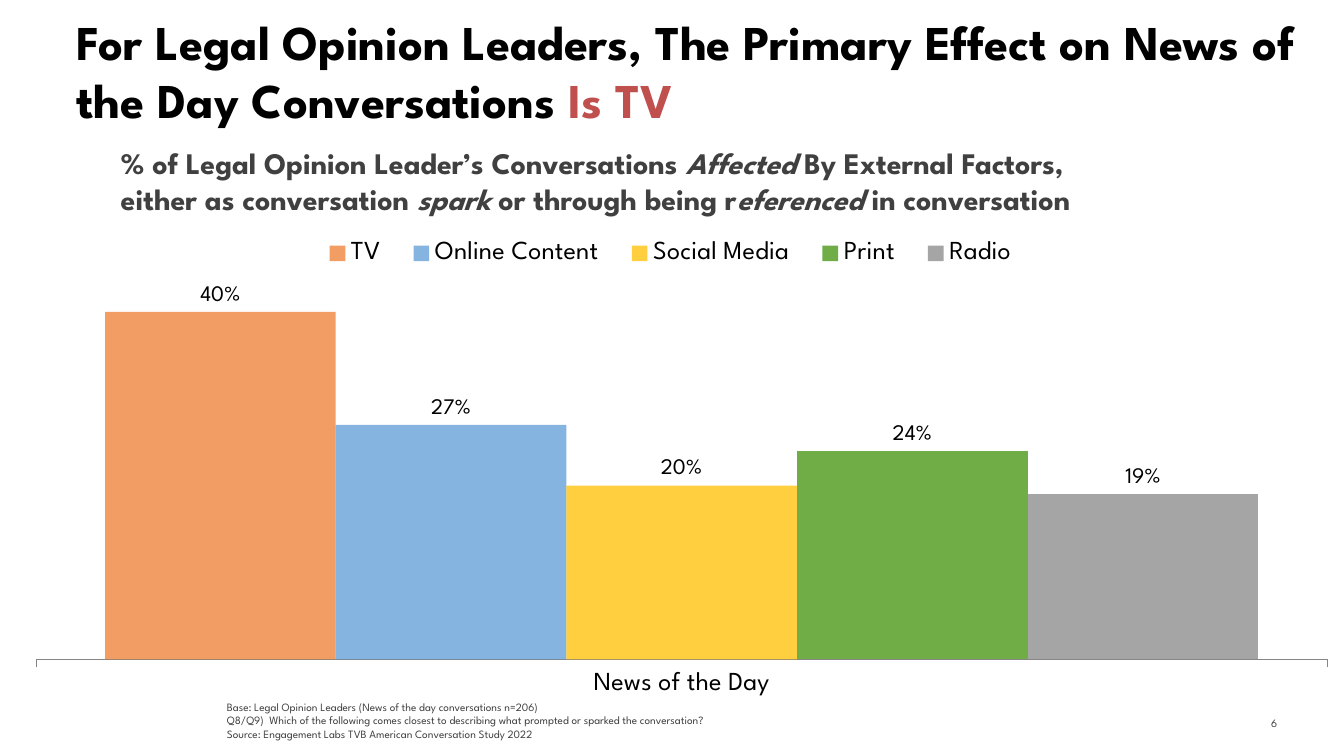
from lxml import etree
from pptx import Presentation
from pptx.chart.data import CategoryChartData
from pptx.dml.color import RGBColor
from pptx.enum.chart import XL_CHART_TYPE as ChartType
from pptx.enum.chart import XL_LABEL_POSITION as LabelPosition
from pptx.enum.chart import XL_LEGEND_POSITION as LegendPosition
from pptx.enum.chart import XL_TICK_MARK as TickMark
from pptx.enum.text import MSO_ANCHOR as Anchor
from pptx.enum.text import MSO_AUTO_SIZE as AutoSize
from pptx.enum.text import PP_ALIGN as Align
from pptx.oxml import parse_xml
from pptx.oxml.ns import nsdecls, qn
from pptx.util import Inches, Pt

FONT = "League Spartan"
COLORS = {
    "black": "000000", "dark": "404040", "number": "3C3C3A", "accent": "C0504D",
    "axis": "868686", "TV": "ED7D31", "Online Content": "5B9BD5",
    "Social Media": "FFC000", "Print": "70AD47", "Radio": "A5A5A5",
}


def add_text(paragraphs, left, top, width, height, size, color="dark", bold=False,
             aligns=(), anchor=Anchor.TOP, inset_top=0.05, wrap=True, grow=False):
    """Each paragraph is a list of (text, run format) pairs."""
    box = slide.shapes.add_textbox(Inches(left), Inches(top), Inches(width), Inches(height))
    frame = box.text_frame
    frame.word_wrap = wrap
    frame.auto_size = AutoSize.SHAPE_TO_FIT_TEXT if grow else AutoSize.NONE
    frame.vertical_anchor = anchor
    frame.margin_top = Inches(inset_top)
    for index, pieces in enumerate(paragraphs):
        paragraph = frame.paragraphs[0] if index == 0 else frame.add_paragraph()
        if index < len(aligns):
            paragraph.alignment = aligns[index]
        for text, style in pieces:
            run = paragraph.add_run()
            run.text = text
            run.font.name = FONT
            run.font.size = Pt(style.get("size", size))
            run.font.bold = bold
            run.font.italic = style.get("italic", False)
            run.font.color.rgb = RGBColor.from_string(COLORS[style.get("color", color)])


def set_font(font, size):
    font.name = FONT
    font.size = Pt(size)
    font.bold = False
    font.color.rgb = RGBColor.from_string(COLORS["black"])


presentation = Presentation()
presentation.slide_width = Inches(10)
presentation.slide_height = Inches(10) * 9 // 16
slide = presentation.slides.add_slide(presentation.slide_layouts[6])

# Slide number
add_text([[("6", {}), (" ", {"size": 8})]], 9.04, 5.22, 0.59, 0.3, size=6,
         color="number", aligns=[Align.RIGHT], anchor=Anchor.MIDDLE)

# Column chart: one series per medium
shares = {"TV": 0.40, "Online Content": 0.27, "Social Media": 0.20, "Print": 0.24, "Radio": 0.19}
translucent = ("TV", "Online Content", "Social Media")
chart_data = CategoryChartData(number_format="0%")
chart_data.categories = ["News of the Day"]
for medium, share in shares.items():
    chart_data.add_series(medium, [share])
chart = slide.shapes.add_chart(ChartType.COLUMN_CLUSTERED, Inches(0), Inches(1.64),
                               Inches(9.88), Inches(3.54), chart_data).chart
chart.has_title = False
set_font(chart.font, 18)
chart.has_legend = True
chart.legend.position = LegendPosition.TOP
chart.legend.include_in_layout = False
set_font(chart.legend.font, 14)

category_axis = chart.category_axis
category_axis.major_tick_mark = TickMark.OUTSIDE
category_axis.format.line.color.rgb = RGBColor.from_string(COLORS["axis"])
category_axis.format.line.width = Pt(0.25)
set_font(category_axis.tick_labels.font, 14)
value_axis = chart.value_axis
value_axis.minimum_scale = 0
value_axis.maximum_scale = 0.5
value_axis.has_major_gridlines = False
value_axis.visible = False

plot = chart.plots[0]
plot.gap_width = 60
plot.overlap = 0
plot.vary_by_categories = False
for series in plot.series:
    fill = series.format.fill
    fill.solid()
    fill.fore_color.rgb = RGBColor.from_string(COLORS[series.name])
    if series.name in translucent:
        color_element = next(series.format.fill._xPr.iter(qn("a:srgbClr")))
        etree.SubElement(color_element, qn("a:alpha")).set("val", "75000")
    labels = series.data_labels
    labels.show_value = True
    labels.position = LabelPosition.OUTSIDE_END
    labels.number_format = "0%"
    labels.number_format_is_linked = False
    set_font(labels.font, 12)

# Fixed places of the plot area and the legend, as shares of the chart
plot_area = next(chart.element.iter(qn("c:plotArea")))
legend = next(chart.element.iter(qn("c:legend")))
edges = [("xMode", "edge"), ("yMode", "edge")]
layouts = [
    (plot_area, 0, [("layoutTarget", "inner")] + edges
     + [("x", 0.027), ("y", 0.01), ("w", 0.973), ("h", 0.92)]),
    (legend, 1, edges + [("x", 0.23), ("y", 0.03), ("w", 0.55), ("h", 0.08)]),
]
for parent, position, settings in layouts:
    for layout in parent.findall(qn("c:layout")):
        parent.remove(layout)
    items = "".join(f'<c:{name} val="{value}"/>' for name, value in settings)
    parent.insert(position, parse_xml(
        f'<c:layout {nsdecls("c")}><c:manualLayout>{items}</c:manualLayout></c:layout>'))

# Title
add_text([[("For Legal Opinion Leaders, The Primary Effect on News of the Day Conversations ", {}),
           ("Is TV", {"color": "accent"})]],
         0.47, 0.09, 9.41, 0.94, size=26, color="black", bold=True, inset_top=0)

# Chart heading
italic = {"italic": True}
add_text([[("% of Legal Opinion Leader’s Conversations ", {}), ("Affected", italic),
           (" By External Factors,", {})],
          [("either as conversation ", {}), ("spark", italic), (" or through being r", {}),
           ("eferenced", italic), (" in conversation", {})]],
         0.8, 1.03, 8.65, 0.64, size=16, bold=True, aligns=[Align.LEFT, Align.CENTER],
         wrap=False, grow=True)

# Source notes
notes = [
    "Base: Legal Opinion Leaders (News of the day conversations n=206)",
    "Q8/Q9)  Which of the following comes closest to describing what prompted or sparked the conversation?",
    "Source: Engagement Labs TVB American Conversation Study 2022",
]
add_text([[(note, {})] for note in notes], 1.59, 5.16, 8.42, 0.4, size=6,
         anchor=Anchor.BOTTOM, grow=True)

presentation.save("out.pptx")
